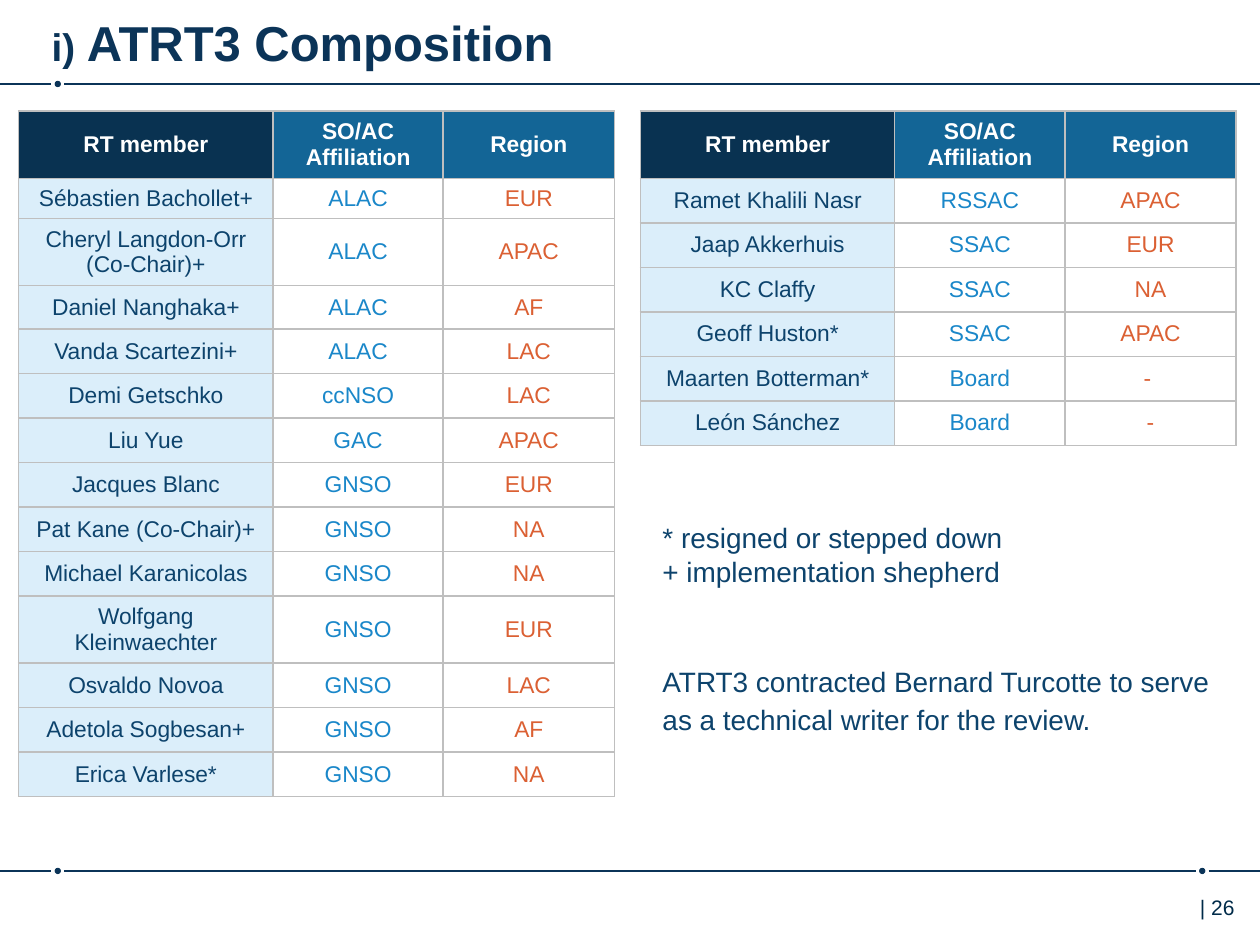
from dataclasses import dataclass

from lxml import etree
from pptx import Presentation
from pptx.dml.color import RGBColor
from pptx.enum.shapes import MSO_CONNECTOR, MSO_SHAPE
from pptx.enum.text import MSO_ANCHOR, MSO_AUTO_SIZE, PP_ALIGN
from pptx.oxml.ns import qn
from pptx.util import Pt

STRAIGHT = MSO_CONNECTOR.STRAIGHT
OVAL = MSO_SHAPE.OVAL
TOP, MIDDLE = MSO_ANCHOR.TOP, MSO_ANCHOR.MIDDLE
LEFT, CENTER = PP_ALIGN.LEFT, PP_ALIGN.CENTER
NO_AUTOFIT = MSO_AUTO_SIZE.NONE
TITLE_ONLY = 5


@dataclass(frozen=True)
class Theme:
    font: str = "Arial"
    navy: str = "0B3458"
    page_number: str = "002B49"
    body: str = "0D436C"
    header_text: str = "FFFFFF"
    header_fills: tuple = ("093251", "136596", "136596")
    column_fills: tuple = ("CCE8F8", "FFFFFF", "FFFFFF")
    column_texts: tuple = ("0D436C", "1A87C9", "DB6033")
    fill_opacity: int = 70
    grid: str = "BFBFBF"
    title_size: int = 28
    title_number_size: int = 22
    table_size: int = 13
    body_size: int = 16
    page_size: int = 12


THEME = Theme()
SLIDE_WIDTH, SLIDE_HEIGHT = 720, 540
DOT_SIZE = 3.6
DOT_GAP = 3.7  # from dot centre to the end of the rule
COLUMN_WIDTHS = (145.4, 97.2, 97.9)
HEADER_HEIGHT, ROW_HEIGHT, TWO_LINE_HEIGHT = 36, 25.45, 36

HEADINGS = ("RT member", "SO/AC Affiliation", "Region")
LEFT_MEMBERS = (
    ("Sébastien Bachollet+", "ALAC", "EUR"),
    ("Cheryl Langdon-Orr (Co-Chair)+", "ALAC", "APAC"),
    ("Daniel Nanghaka+", "ALAC", "AF"),
    ("Vanda Scartezini+", "ALAC", "LAC"),
    ("Demi Getschko", "ccNSO", "LAC"),
    ("Liu Yue", "GAC", "APAC"),
    ("Jacques Blanc", "GNSO", "EUR"),
    ("Pat Kane (Co-Chair)+", "GNSO", "NA"),
    ("Michael Karanicolas", "GNSO", "NA"),
    ("Wolfgang Kleinwaechter", "GNSO", "EUR"),
    ("Osvaldo Novoa", "GNSO", "LAC"),
    ("Adetola Sogbesan+", "GNSO", "AF"),
    ("Erica Varlese*", "GNSO", "NA"),
)
RIGHT_MEMBERS = (
    ("Ramet Khalili Nasr", "RSSAC", "APAC"),
    ("Jaap Akkerhuis", "SSAC", "EUR"),
    ("KC Claffy", "SSAC", "NA"),
    ("Geoff Huston*", "SSAC", "APAC"),
    ("Maarten Botterman*", "Board", "- "),
    ("León Sánchez", "Board", "-"),
)
# Heights of the left rows that differ from the usual one
LEFT_HEIGHTS = {1: 21.7, 2: TWO_LINE_HEIGHT, 3: 24.8, 10: TWO_LINE_HEIGHT}


def color(value):
    return RGBColor.from_string(value)


def style_font(font, size, value, bold=False):
    font.name = THEME.font
    font.size = Pt(size)
    font.bold = bold
    font.color.rgb = color(value)


def add_dotted_rule(slide, left, middle, width, dots):
    """Horizontal rule broken around a dot at each given x."""
    start = left
    for dot in (*dots, None):
        end = left + width if dot is None else dot - DOT_GAP
        line = slide.shapes.add_connector(STRAIGHT, Pt(start), Pt(middle), Pt(end), Pt(middle))
        line.line.color.rgb = color(THEME.navy)
        line.line.width = Pt(1)
        etree.SubElement(line._element.spPr, qn("a:effectLst"))
        if dot is not None:
            circle = slide.shapes.add_shape(
                OVAL, Pt(dot - DOT_SIZE / 2), Pt(middle - DOT_SIZE / 2), Pt(DOT_SIZE), Pt(DOT_SIZE))
            circle.shadow.inherit = False
            circle.fill.solid()
            circle.fill.fore_color.rgb = color(THEME.navy)
            circle.line.fill.background()
            start = dot + DOT_GAP


def fill_title(slide, left, top, width, height):
    title = slide.shapes.title
    title.left, title.top, title.width, title.height = Pt(left), Pt(top), Pt(width), Pt(height)
    frame = title.text_frame
    frame.auto_size = NO_AUTOFIT
    frame.vertical_anchor = TOP
    frame.margin_left = frame.margin_right = 0
    frame.margin_top = frame.margin_bottom = Pt(3.6)
    paragraph = frame.paragraphs[0]
    paragraph.alignment = LEFT
    parts = (("i)", THEME.title_number_size), (" ATRT3 Composition", THEME.title_size))
    for text, size in parts:
        run = paragraph.add_run()
        run.text = text
        style_font(run.font, size, THEME.navy, bold=True)


def set_borders(cell):
    properties = cell._tc.get_or_add_tcPr()
    for index, side in enumerate(("a:lnL", "a:lnR", "a:lnT", "a:lnB")):
        line = etree.Element(qn(side), w=str(Pt(1)))
        fill = etree.SubElement(line, qn("a:solidFill"))
        etree.SubElement(fill, qn("a:srgbClr"), val=THEME.grid)
        properties.insert(index, line)


def fill_cell(cell, text, fill, text_color, bold=False, opacity=100):
    cell.vertical_anchor = MIDDLE
    cell.fill.solid()
    cell.fill.fore_color.rgb = color(fill)
    if opacity < 100:
        fill_color = cell._tc.tcPr.find(".//" + qn("a:srgbClr"))
        etree.SubElement(fill_color, qn("a:alpha"), val=str(opacity * 1000))
    set_borders(cell)
    cell.text = text
    paragraph = cell.text_frame.paragraphs[0]
    paragraph.alignment = CENTER
    style_font(paragraph.font, THEME.table_size, text_color, bold)


def add_member_table(slide, left, top, members, special_heights):
    heights = [HEADER_HEIGHT] + [
        special_heights.get(row, ROW_HEIGHT) for row in range(1, len(members) + 1)]
    table = slide.shapes.add_table(
        len(heights), len(HEADINGS), Pt(left), Pt(top),
        Pt(sum(COLUMN_WIDTHS)), Pt(sum(heights))).table
    table.horz_banding = False
    for row, height in zip(table.rows, heights):
        row.height = Pt(height)
    for index, width in enumerate(COLUMN_WIDTHS):
        table.columns[index].width = Pt(width)
        fill_cell(table.cell(0, index), HEADINGS[index], THEME.header_fills[index],
                  THEME.header_text, bold=True)
        for row, member in enumerate(members, 1):
            fill_cell(table.cell(row, index), member[index], THEME.column_fills[index],
                      THEME.column_texts[index], opacity=THEME.fill_opacity)


def add_text_box(slide, left, top, width, height, lines, size, text_color):
    frame = slide.shapes.add_textbox(Pt(left), Pt(top), Pt(width), Pt(height)).text_frame
    frame.word_wrap = True
    for index, text in enumerate(lines):
        paragraph = frame.add_paragraph() if index else frame.paragraphs[0]
        paragraph.text = text
        style_font(paragraph.font, size, text_color)
    return frame


def add_legend(slide, left, top, width, height):
    lines = (
        "* resigned or stepped down",
        "+ implementation shepherd",
        "ATRT3 contracted Bernard Turcotte to serve as a technical writer for the review.",
    )
    frame = add_text_box(slide, left, top, width, height, lines, THEME.body_size, THEME.body)
    frame.margin_top = frame.margin_bottom = Pt(7.2)
    writer = frame.paragraphs[-1]
    writer.space_before = Pt(41)
    writer.line_spacing = 1.15


def main():
    presentation = Presentation()
    presentation.slide_width, presentation.slide_height = Pt(SLIDE_WIDTH), Pt(SLIDE_HEIGHT)
    slide = presentation.slides.add_slide(presentation.slide_layouts[TITLE_ONLY])

    # Frame of the page
    add_dotted_rule(slide, 0, 48, SLIDE_WIDTH, (33,))
    add_dotted_rule(slide, 0, 497.7, SLIDE_WIDTH, (33, SLIDE_WIDTH - 33))
    add_text_box(slide, 678.6, 507.6, 41.4, 28.8, ("| 26",), THEME.page_size, THEME.page_number)

    # Title, members and legend
    fill_title(slide, 29.5, 3.6, 630.7, 35.3)
    add_member_table(slide, 10.6, 63.4, LEFT_MEMBERS, LEFT_HEIGHTS)
    add_member_table(slide, 365.9, 63.4, RIGHT_MEMBERS, {})
    add_legend(slide, 371.5, 290.2, 328.3, 140)

    presentation.save("out.pptx")


if __name__ == "__main__":
    main()
